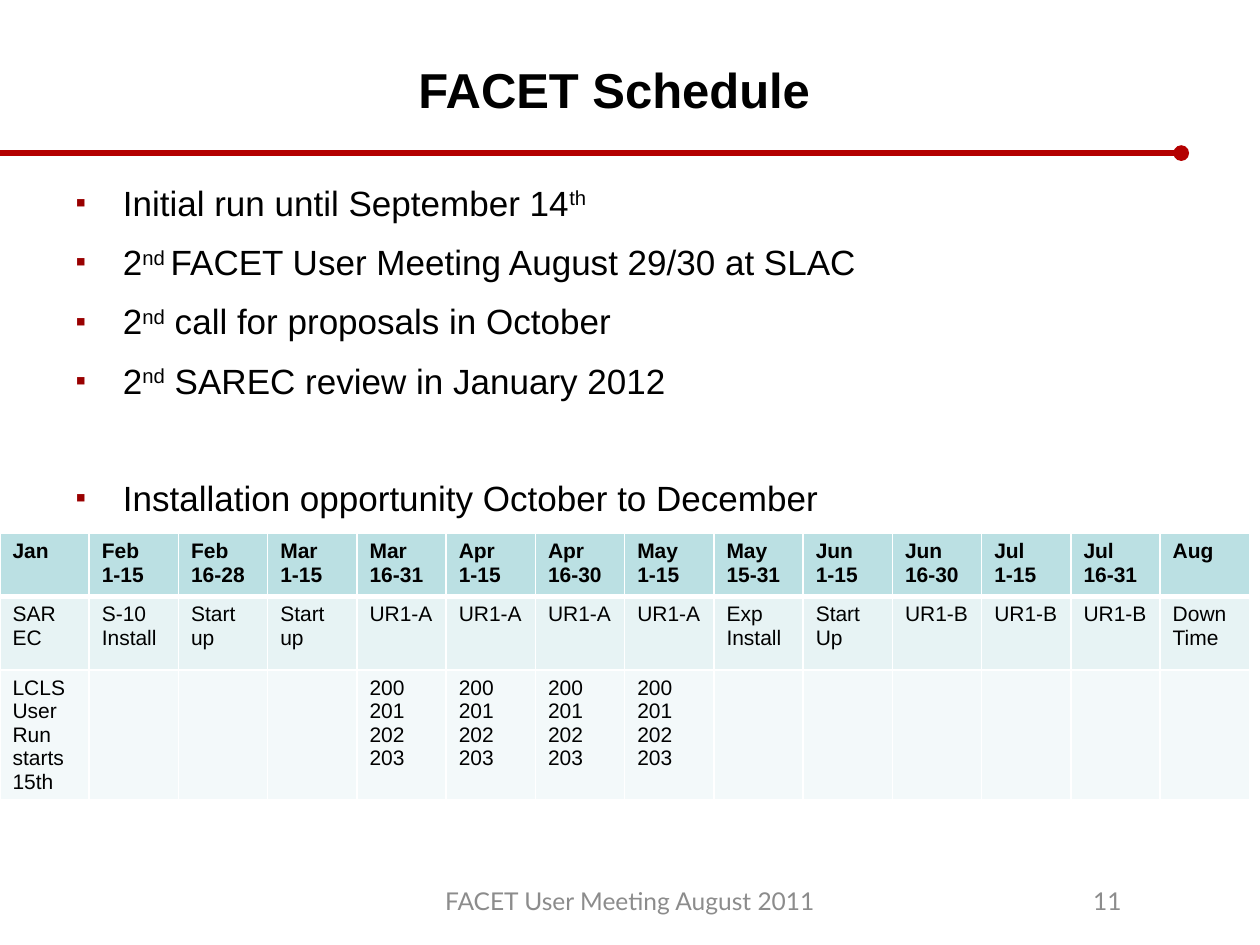
"""Build the FACET schedule slide."""
from lxml import etree
from pptx import Presentation
from pptx.dml.color import RGBColor
from pptx.enum.shapes import MSO_CONNECTOR
from pptx.enum.text import MSO_ANCHOR, MSO_AUTO_SIZE, PP_ALIGN
from pptx.oxml.ns import qn
from pptx.util import Pt

LEFT, CENTER, RIGHT = PP_ALIGN.LEFT, PP_ALIGN.CENTER, PP_ALIGN.RIGHT
TOP, MIDDLE = MSO_ANCHOR.TOP, MSO_ANCHOR.MIDDLE
FIXED = MSO_AUTO_SIZE.NONE
STRAIGHT = MSO_CONNECTOR.STRAIGHT

BLACK = RGBColor(0x00, 0x00, 0x00)
WHITE = RGBColor(0xFF, 0xFF, 0xFF)
GRAY = RGBColor(0x8C, 0x8C, 0x8C)
RED = RGBColor(0xB4, 0x00, 0x00)
MAROON = RGBColor(0x99, 0x00, 0x00)
FILLS = [
    RGBColor(0xBB, 0xE0, 0xE3),
    RGBColor(0xE7, 0xF3, 0xF4),
    RGBColor(0xF3, 0xF9, 0xFA),
]

TITLE = {"name": "Arial", "size": Pt(28), "bold": True}
BODY = {"name": "Arial", "size": Pt(20), "bold": False}
HEAD = {"name": "Arial", "size": Pt(12), "bold": True}
CELL = {"name": "Arial", "size": Pt(12), "bold": False}
FOOT = {"name": "Lato", "size": Pt(14), "bold": False}

GAP = 5.15
ITEMS = [
    (0, ["Initial run until September 14", "th"]),
    (GAP, ["2", "nd ", "FACET User Meeting August 29/30 at SLAC"]),
    (GAP, ["2", "nd", " call for proposals in October"]),
    (GAP, ["2", "nd", " SAREC review in January 2012"]),
    (38, ["Installation opportunity October to December"]),
]

RUNS = "200\n201\n202\n203"
PLAN = [
    ("Jan", "SAR\nEC", "LCLS User Run\nstarts\n15th"),
    ("Feb\n1-15", "S-10\nInstall", ""),
    ("Feb\n16-28", "Start\nup", ""),
    ("Mar\n1-15", "Start\nup", ""),
    ("Mar\n16-31", "UR1-A", RUNS),
    ("Apr\n1-15", "UR1-A", RUNS),
    ("Apr\n16-30", "UR1-A", RUNS),
    ("May\n1-15", "UR1-A", RUNS),
    ("May\n15-31", "Exp\nInstall", ""),
    ("Jun\n1-15", "Start\nUp", ""),
    ("Jun\n16-30", "UR1-B", ""),
    ("Jul\n1-15", "UR1-B", ""),
    ("Jul\n16-31", "UR1-B", ""),
    ("Aug", "Down\nTime", ""),
]


class Deck:
    """Hold the style and the current slide."""

    def __init__(self, wide, high):
        self.prs = Presentation()
        self.prs.slide_width, self.prs.slide_height = Pt(wide), Pt(high)
        self.slide = self.prs.slides.add_slide(self.prs.slide_layouts[1])
        self.shapes = self.slide.shapes

    def style(self, font, form, color=BLACK):
        """Apply format values to a font."""
        for key, value in form.items():
            setattr(font, key, value)
        font.color.rgb = color

    def place(self, shape, box):
        """Set a shape's place and size."""
        for key, value in zip(("left", "top", "width", "height"), box):
            setattr(shape, key, Pt(value))

    def frame(self, shape, anchor):
        """Prepare and return a text frame."""
        form = {"word_wrap": True, "auto_size": FIXED, "vertical_anchor": anchor}
        for key, value in form.items():
            setattr(shape.text_frame, key, value)
        return shape.text_frame

    def label(self, shape, text, form, align, color=BLACK):
        """Write one centred-height line of text."""
        para = self.frame(shape, MIDDLE).paragraphs[0]
        para.alignment = align
        run = para.add_run()
        run.text = text
        self.style(run.font, form, color)

    def title(self, text, box):
        """Fill the title placeholder."""
        self.place(self.shapes.title, box)
        self.label(self.shapes.title, text, TITLE, CENTER)

    def note(self, text, box, align):
        """Add a footer text box."""
        shape = self.shapes.add_textbox(*map(Pt, box))
        self.label(shape, text, FOOT, align, GRAY)

    def bullet(self, para):
        """Give a paragraph a small square bullet."""
        props = para._p.get_or_add_pPr()
        props.set("marL", str(Pt(27)))
        props.set("indent", str(-Pt(27)))
        tint = etree.SubElement(props, qn("a:buClr"))
        etree.SubElement(tint, qn("a:srgbClr"), val=str(MAROON))
        etree.SubElement(props, qn("a:buSzPct"), val="85000")
        etree.SubElement(props, qn("a:buFont"), typeface="Arial")
        etree.SubElement(props, qn("a:buChar"), char="▪")

    def body(self, items, box):
        """Fill the body placeholder with a list."""
        shape = self.slide.placeholders[1]
        self.place(shape, box)
        frame = self.frame(shape, TOP)
        frame.margin_top = Pt(8.7)
        for row, (gap, parts) in enumerate(items):
            para = frame.add_paragraph() if row else frame.paragraphs[0]
            self.bullet(para)
            form = {"alignment": LEFT, "line_spacing": 1.2, "space_before": Pt(gap)}
            for key, value in form.items():
                setattr(para, key, value)
            for spot, text in enumerate(parts):
                run = para.add_run()
                run.text = text
                self.style(run.font, BODY)
                if spot == 1:
                    run._r.get_or_add_rPr().set("baseline", "30000")

    def rule(self, x, y, end):
        """Draw a level line with a round end."""
        line = self.shapes.add_connector(STRAIGHT, Pt(x), Pt(y), Pt(end), Pt(y))
        line.line.color.rgb = RED
        line.line.width = Pt(3)
        props = line._element.spPr
        etree.SubElement(props.find(qn("a:ln")), qn("a:tailEnd"), type="oval")
        etree.SubElement(props, qn("a:effectLst"))

    def edges(self, cell, sizes):
        """Draw white cell borders."""
        props = cell._tc.get_or_add_tcPr()
        for side, size in sizes.items():
            edge = etree.SubElement(props, qn(f"a:ln{side}"), w=str(Pt(size)))
            fill = etree.SubElement(edge, qn("a:solidFill"))
            etree.SubElement(fill, qn("a:srgbClr"), val=str(WHITE))

    def table(self, plan, box, highs):
        """Add a table from its columns."""
        grid = self.shapes.add_table(len(highs), len(plan), *map(Pt, box)).table
        for row, high in zip(grid.rows, highs):
            row.height = Pt(high)
        for col, texts in enumerate(plan):
            grid.columns[col].width = Pt(box[2] / len(plan))
            for row, text in enumerate(texts):
                cell = grid.cell(row, col)
                thick = {"T": 3 if row == 1 else 1, "B": 1 if row else 3}
                self.edges(cell, {"L": 1, "R": 1, **thick})
                cell.fill.solid()
                cell.fill.fore_color.rgb = FILLS[row]
                cell.text_frame.text = text
                for para in cell.text_frame.paragraphs:
                    for run in para.runs:
                        self.style(run.font, CELL if row else HEAD)


def main():
    """Build and save the slide."""
    deck = Deck(720, 540)
    deck.rule(0, 87.5, 675)
    deck.title("FACET Schedule", (30, 18, 642, 66))
    deck.body(ITEMS, (36, 90, 666, 390))
    deck.note("11", (516, 500.5, 132, 28.75), RIGHT)
    deck.note("FACET User Meeting August 2011", (216, 500.5, 288, 28.75), CENTER)
    deck.table(PLAN, (0, 304.8, 714.3, 146.9), (36, 42, 69))
    deck.prs.save("out.pptx")


if __name__ == "__main__":
    main()
